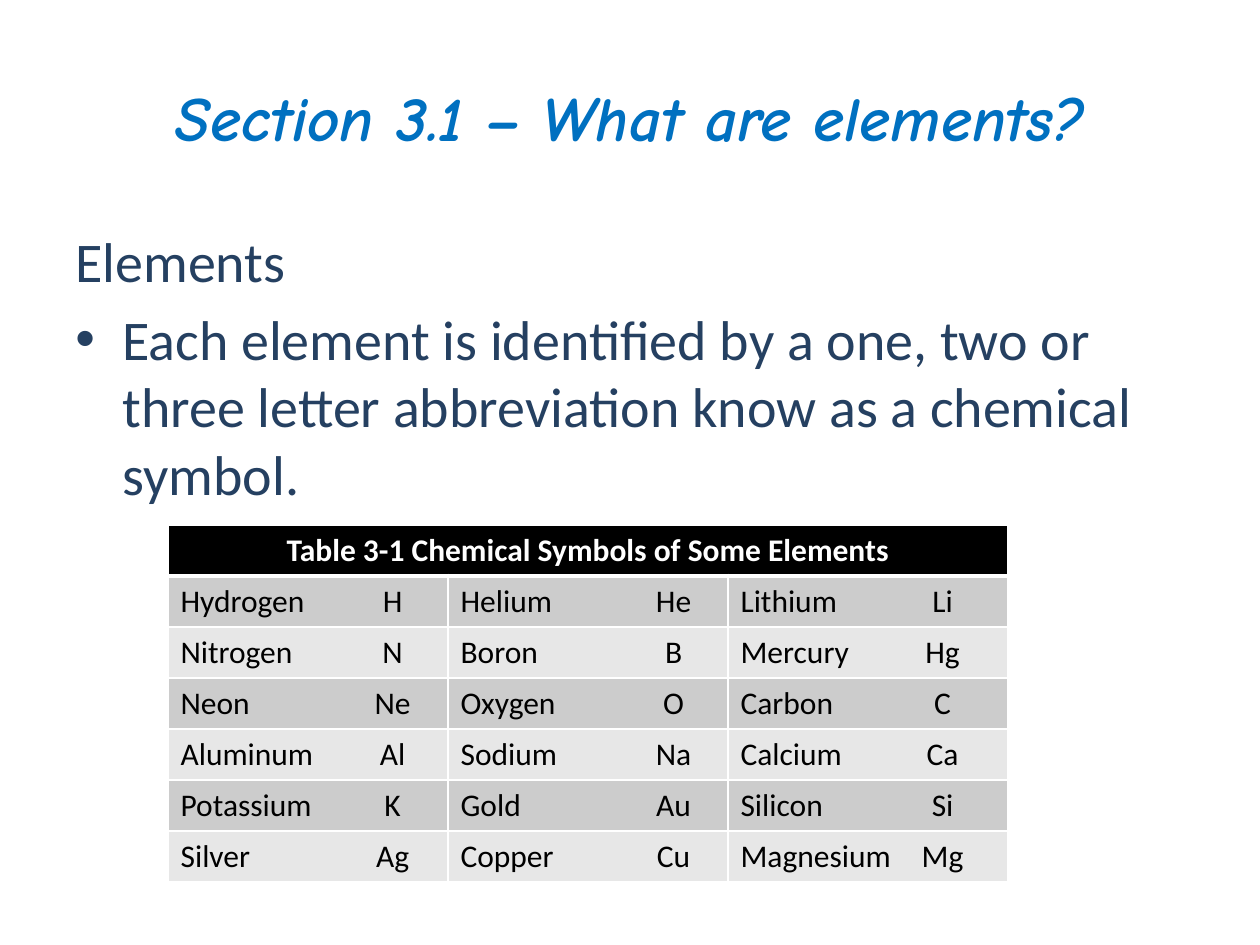
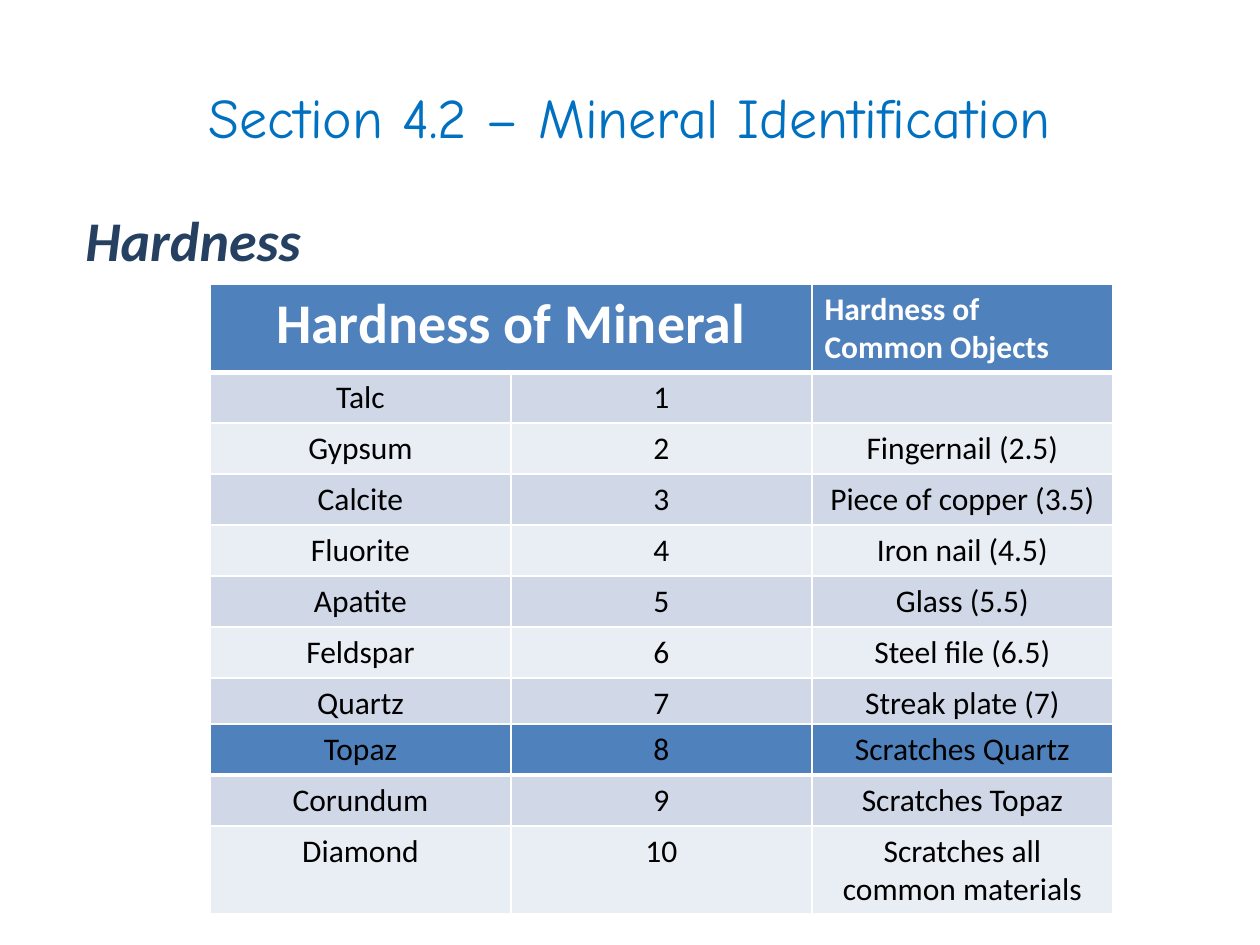
"""Build two earth science slides: chemical symbols and mineral hardness."""
from lxml.etree import SubElement
from pptx import Presentation
from pptx.dml.color import RGBColor
from pptx.enum.text import MSO_ANCHOR, PP_ALIGN
from pptx.oxml.ns import qn
from pptx.util import Pt

PX = 914400 // 126
BLUE = RGBColor(0x00, 0x70, 0xC0)
NAVY = RGBColor(0x25, 0x40, 0x61)
BLACK = RGBColor(0x00, 0x00, 0x00)
WHITE = RGBColor(0xFF, 0xFF, 0xFF)
STEEL = RGBColor(0x4F, 0x81, 0xBD)
GREY_BANDS = RGBColor(0xE7, 0xE7, 0xE7), RGBColor(0xCC, 0xCC, 0xCC)
BLUE_BANDS = RGBColor(0xE9, 0xED, 0xF4), RGBColor(0xD0, 0xD8, 0xE8)
LEFT, CENTER = PP_ALIGN.LEFT, PP_ALIGN.CENTER


def add_text(slide, box, lines, font_name, size, color, emphasis=False):
    frame = slide.shapes.add_textbox(*(n * PX for n in box)).text_frame
    frame.word_wrap = True
    frame.text = "\n".join(lines)
    for paragraph in frame.paragraphs:
        font = paragraph.font
        font.name, font.size, font.color.rgb = font_name, Pt(size), color
        font.bold = font.italic = emphasis
    return frame


def add_grid(slide, left, top, column_width, heights, rows, head_fill, bands, align, titled):
    columns = len(rows[0])
    grid = slide.shapes.add_table(len(rows), columns, left * PX, top * PX,
                                  columns * column_width * PX, sum(heights) * PX).table
    grid.first_row = titled
    for column in grid.columns:
        column.width = column_width * PX
    for r, (height, texts) in enumerate(zip(heights, rows)):
        grid.rows[r].height = height * PX
        heading = titled and r == 0
        for c, text in enumerate(texts):
            cell = grid.cell(r, c)
            props = cell._tc.get_or_add_tcPr()
            for side in ("lnL", "lnR", "lnT", "lnB"):
                thick = (r, side) in ((0, "lnB"), (1, "lnT"))
                line = SubElement(props, qn(f"a:{side}"), w=str(Pt(3 if thick else 1)))
                SubElement(SubElement(line, qn("a:solidFill")), qn("a:srgbClr"), val=str(WHITE))
            cell.fill.solid()
            cell.fill.fore_color.rgb = bands[r % 2] if r else head_fill
            cell.text = text
            paragraph = cell.text_frame.paragraphs[0]
            paragraph.alignment = align
            font = paragraph.font
            font.name, font.size, font.bold = "Calibri", Pt(18), heading
            font.color.rgb = WHITE if heading else BLACK
    return grid


deck = Presentation()
deck.slide_width, deck.slide_height = 1260 * PX, 945 * PX
blank = deck.slide_layouts[6]
elements_slide, minerals_slide = (deck.slides.add_slide(blank) for _ in range(2))

for slide, title, size, emphasis in (
    (elements_slide, "Section 3.1 – What are elements?", 36, True),
    (minerals_slide, "Section 4.2 – Mineral Identification", 32, False),
):
    heading = add_text(slide, (63, 38, 1134, 157), [title], "Comic Neue", size, BLUE, emphasis)
    heading.vertical_anchor = MSO_ANCHOR.MIDDLE
    heading.paragraphs[0].alignment = CENTER

elements_body = add_text(elements_slide, (63, 220, 1134, 703), [
    "Elements",
    "Each element is identified by a one, two or three letter abbreviation "
    "know as a chemical symbol.",
], "Calibri", 32, NAVY)
hardness_body = add_text(minerals_slide, (73, 199, 1134, 624), ["Hardness"],
                         "Calibri", 32, NAVY, True)
for paragraph in (*elements_body.paragraphs, *hardness_body.paragraphs):
    paragraph.space_before = Pt(6.4)

bullet = elements_body.paragraphs[1]._p.get_or_add_pPr()
bullet.set("marL", str(47 * PX))
bullet.set("indent", str(-47 * PX))
bullet_font = SubElement(bullet, qn("a:buFont"), typeface="Arial")
bullet_mark = SubElement(bullet, qn("a:buChar"), char="•")
bullet.find(qn("a:defRPr")).addprevious(bullet_font)
bullet_font.addnext(bullet_mark)

symbols = [
    ("Table 3-1 Chemical Symbols of Some Elements", "", ""),
    ("Hydrogen\tH", "Helium\tHe", "Lithium\tLi"),
    ("Nitrogen\tN", "Boron\tB", "Mercury\tHg"),
    ("Neon\tNe", "Oxygen\tO", "Carbon\tC"),
    ("Aluminum\tAl", "Sodium\tNa", "Calcium\tCa"),
    ("Potassium\tK", "Gold\tAu", "Silicon\tSi"),
    ("Silver\tAg", "Copper\tCu", "Magnesium\tMg"),
]
symbol_grid = add_grid(elements_slide, 168, 525, 280, [51] * 7, symbols,
                       BLACK, GREY_BANDS, LEFT, True)
symbol_grid.cell(0, 0).merge(symbol_grid.cell(0, 2))
symbol_grid.cell(0, 0).text_frame.paragraphs[0].alignment = CENTER
for r in range(1, len(symbols)):
    for c, symbol_center in enumerate((212, 213, 202)):
        props = symbol_grid.cell(r, c).text_frame.paragraphs[0]._p.get_or_add_pPr()
        stops = SubElement(props, qn("a:tabLst"))
        SubElement(stops, qn("a:tab"), pos=str(symbol_center * PX), algn="ctr")
        props.find(qn("a:defRPr")).addprevious(stops)

hardness = [
    ("Hardness of Mineral", "", "Hardness of Common Objects"),
    ("Talc", "1", ""),
    ("Gypsum", "2", "Fingernail (2.5)"),
    ("Calcite", "3", "Piece of copper (3.5)"),
    ("Fluorite", "4", "Iron nail (4.5)"),
    ("Apatite", "5", "Glass (5.5)"),
    ("Feldspar", "6", "Steel file (6.5)"),
    ("Quartz", "7", "Streak plate (7)"),
]
hardest = [
    ("Topaz", "8", "Scratches Quartz"),
    ("Corundum", "9", "Scratches Topaz"),
    ("Diamond", "10", "Scratches all common materials"),
]
hardness_grid = add_grid(minerals_slide, 210, 284, 301, [88] + [51] * 7, hardness,
                         STEEL, BLUE_BANDS, CENTER, True)
hardness_grid.cell(0, 0).merge(hardness_grid.cell(0, 1))
hardness_grid.cell(0, 0).text_frame.paragraphs[0].font.size = Pt(32)
hardness_grid.cell(0, 2).text_frame.paragraphs[0].alignment = LEFT
add_grid(minerals_slide, 210, 724, 301, [51, 51, 88], hardest,
         STEEL, BLUE_BANDS, CENTER, False)

deck.save("out.pptx")
